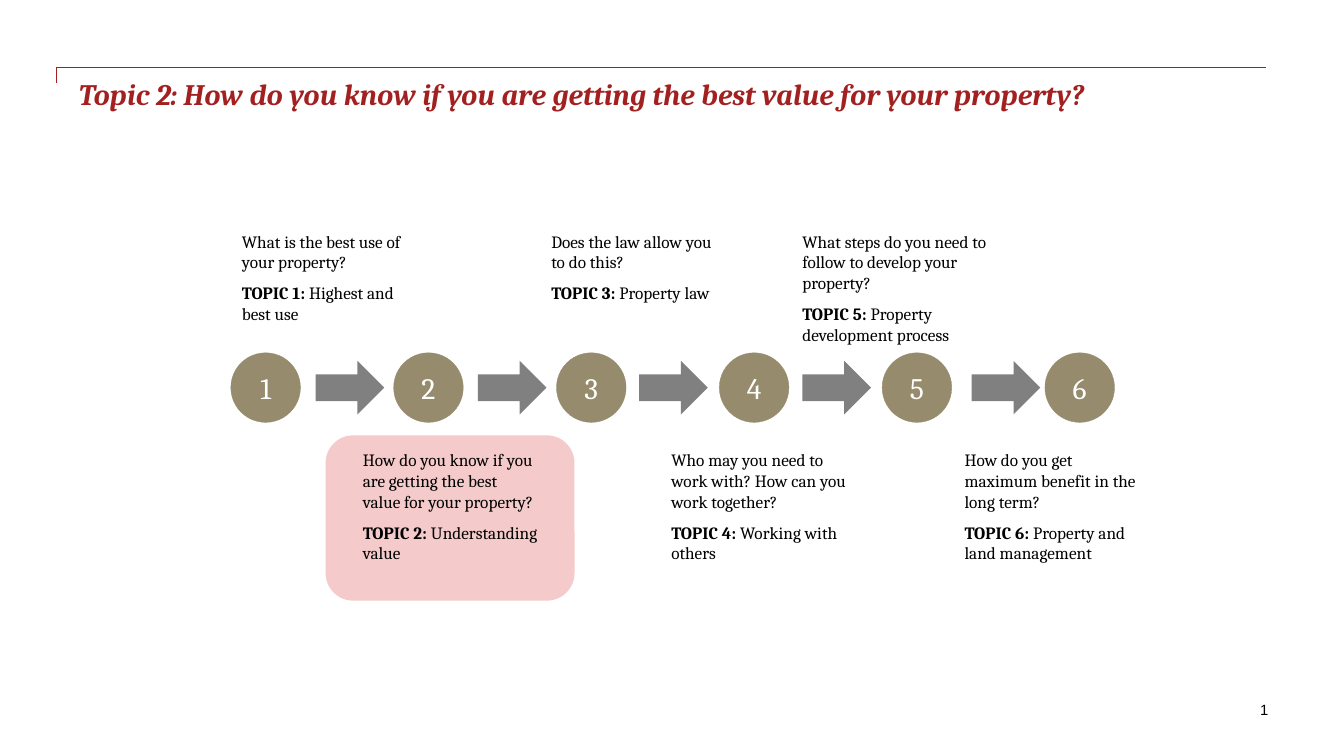
from lxml.etree import SubElement
from pptx import Presentation
from pptx.dml.color import RGBColor
from pptx.enum.shapes import MSO_SHAPE
from pptx.enum.text import MSO_ANCHOR, MSO_AUTO_SIZE, PP_ALIGN
from pptx.oxml.ns import qn
from pptx.util import Pt

theme = {
    "red": RGBColor(0xA3, 0x20, 0x20),
    "pink": RGBColor(0xEA, 0x96, 0x96),
    "olive": RGBColor(0x96, 0x8C, 0x6D),
    "grey": RGBColor(0x80, 0x80, 0x80),
    "white": RGBColor(0xFF, 0xFF, 0xFF),
    "black": RGBColor(0, 0, 0),
    "serif": "Cambria",
    "sans": "Arial",
    "head": Pt(21.2),
    "body": Pt(12.3),
    "foot": Pt(10.6),
}
bare = {"margin_left": 0, "margin_top": 0, "margin_right": 0, "margin_bottom": 0,
        "word_wrap": True, "auto_size": MSO_AUTO_SIZE.NONE,
        "vertical_anchor": MSO_ANCHOR.TOP}


def style(item, color=None, **values):
    for name, value in values.items():
        setattr(item, name, value)
    if color is not None:
        item.color.rgb = theme[color]


def block(kind, left, top, width, height, fill):
    shape = slide.shapes.add_shape(kind, Pt(left), Pt(top), Pt(width), Pt(height))
    shape.shadow.inherit = False
    shape.fill.solid()
    shape.fill.fore_color.rgb = theme[fill]
    shape.line.fill.background()
    return shape


deck = Presentation()
style(deck, slide_width=Pt(960), slide_height=Pt(540))
slide = deck.slides.add_slide(deck.slide_layouts[5])

pen = slide.shapes.build_freeform(Pt(40.3), Pt(59))
pen.add_line_segments([(Pt(40.3), Pt(48.2)), (Pt(904.3), Pt(48.2))], close=False)
rule = pen.convert_to_shape()
rule.shadow.inherit = False
rule.fill.background()
style(rule.line, "red", width=Pt(1))

title = slide.shapes.title
style(title, left=Pt(56.2), top=Pt(54), width=Pt(848), height=Pt(72))
style(title.text_frame, **bare)
title.text_frame.text = "Topic 2: How do you know if you are getting the best value for your property?"
line = title.text_frame.paragraphs[0]
line.alignment = PP_ALIGN.LEFT
style(line.runs[0].font, "red", name=theme["serif"], size=theme["head"], bold=True, italic=True)

panel = block(MSO_SHAPE.ROUNDED_RECTANGLE, 232.6, 311, 177.8, 118.1, "pink")
tint = panel._element.spPr.find(".//" + qn("a:srgbClr"))
SubElement(tint, qn("a:alpha"), val="50000")

topics = [
    (172.8, 125.3, "What is the best use of your property?", "Highest and best use"),
    (259.2, 125.3, "How do you know if you are getting the best value for your property?",
     "Understanding value"),
    (393.8, 125.3, "Does the law allow you to do this?", "Property law"),
    (479.5, 125.3, "Who may you need to work with? How can you work together?",
     "Working with others"),
    (573.1, 142.6, "What steps do you need to follow to develop your property?",
     "Property development process"),
    (689, 125.3, "How do you get maximum benefit in the long term?",
     "Property and land management"),
]
for step, (left, width, ask, name) in enumerate(topics):
    num = step + 1
    disc = block(MSO_SHAPE.OVAL, 164.9 + 116.3 * step, 252, 49.7, 49.7, "olive")
    style(disc.line, "olive", width=Pt(0.25))
    disc.text_frame.text = str(num)
    disc.text_frame.vertical_anchor = MSO_ANCHOR.MIDDLE
    line = disc.text_frame.paragraphs[0]
    line.alignment = PP_ALIGN.CENTER
    style(line.runs[0].font, "white", name=theme["serif"], size=theme["head"])

    top = 321.1 if step % 2 else 164.9
    note = slide.shapes.add_textbox(Pt(left), Pt(top), Pt(width), Pt(87.8))
    style(note.text_frame, **bare)
    lines = [note.text_frame.paragraphs[0], note.text_frame.add_paragraph()]
    for line, parts in zip(lines, [[(ask, False)], [(f"TOPIC {num}: ", True), (name, False)]]):
        line.space_after = Pt(7.5)
        for text, bold in parts:
            run = line.add_run()
            run.text = text
            style(run.font, "black", name=theme["serif"], size=theme["body"], bold=bold)

for left in (225.4, 341.3, 456.5, 573.1, 694.1):
    block(MSO_SHAPE.RIGHT_ARROW, left, 257.8, 49, 38.2, "grey")

page = slide.shapes.add_textbox(Pt(650.9), Pt(494.6), Pt(262.1), Pt(25.2))
style(page.text_frame, word_wrap=True, vertical_anchor=MSO_ANCHOR.MIDDLE)
line = page.text_frame.paragraphs[0]
line.alignment = PP_ALIGN.RIGHT
run = line.add_run()
run.text = "1"
style(run.font, "black", name=theme["sans"], size=theme["foot"])

deck.save("out.pptx")
